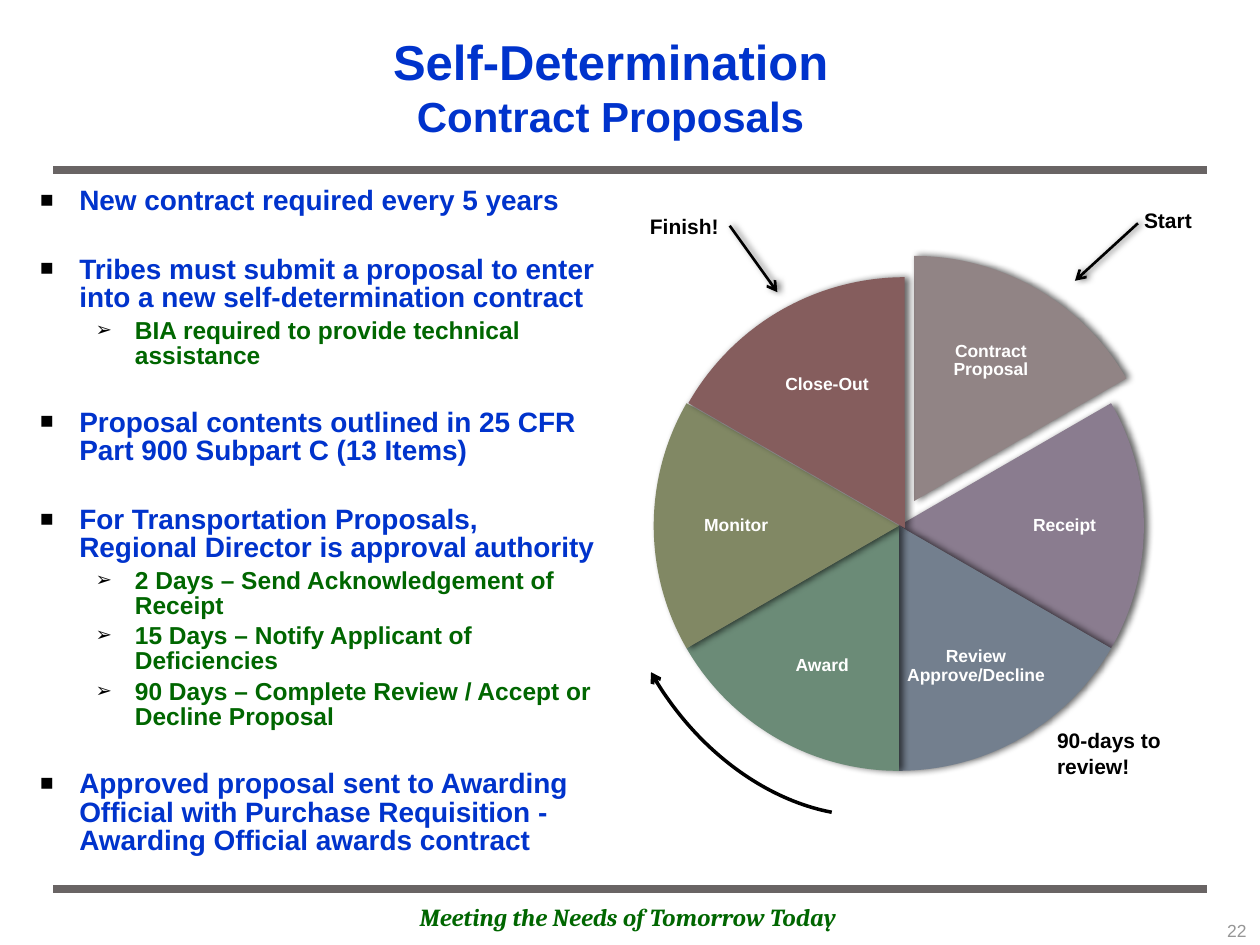
from lxml import etree
from pptx import Presentation
from pptx.dml.color import RGBColor
from pptx.enum.shapes import MSO_CONNECTOR as Conn, MSO_SHAPE as Kind
from pptx.enum.text import MSO_ANCHOR as Anchor, PP_ALIGN as Align
from pptx.oxml.ns import qn
from pptx.util import Cm, Pt

BLUE = RGBColor(0x00, 0x33, 0xCC)
GREEN = RGBColor(0x00, 0x66, 0x00)
BLACK = RGBColor(0x00, 0x00, 0x00)
WHITE = RGBColor(0xFF, 0xFF, 0xFF)
RULE = RGBColor(0x69, 0x64, 0x64)
GRAY = RGBColor(0x96, 0x96, 0x96)

# Body text: level, words, space before in points
POINTS = [
    (0, "New contract required every 5 years", 0),
    (0, "Tribes must submit a proposal to enter into a new "
        "self-determination contract", 23),
    (1, "BIA required to provide technical assistance", 3.2),
    (0, "Proposal contents outlined in 25 CFR Part 900 Subpart C (13 Items)", 23),
    (0, "For Transportation Proposals, Regional Director is approval authority", 23),
    (1, "2 Days – Send Acknowledgement of Receipt", 3.2),
    (1, "15 Days – Notify Applicant of Deficiencies", 3.2),
    (1, "90 Days – Complete Review / Accept or Decline Proposal", 3.2),
    (0, "Approved proposal sent to Awarding Official with Purchase "
        "Requisition - Awarding Official awards contract", 23),
]
# Level style: bullet, left margin in cm, size, colour
LEVELS = [("■", 0.79, 16, BLUE), ("➢", 1.91, 14, GREEN)]
HANG = 0.79

# Slices run clockwise from the top: label, fill, pie box, label box
DISC = (13.18, 5.66, 9.88, 9.88)
SLICES = [
    ("Contract Proposal", RGBColor(0x91, 0x84, 0x85),
     (13.49, 5.16, 9.88, 9.88), (18.54, 6.22, 2.87, 2.11)),
    ("Receipt", RGBColor(0x8A, 0x7C, 0x8F), DISC, (19.96, 9.6, 3, 2.01)),
    ("Review Approve/Decline", RGBColor(0x73, 0x7F, 0x8E), DISC,
     (18.24, 12.37, 2.87, 2.11)),
    ("Award", RGBColor(0x6B, 0x8B, 0x77), DISC, (15.14, 12.37, 2.87, 2.11)),
    ("Monitor", RGBColor(0x81, 0x88, 0x64), DISC, (13.34, 9.6, 3, 2.01)),
    ("Close-Out", RGBColor(0x85, 0x5D, 0x5D),
     (13.21, 5.59, 10.06, 10.11), (15.21, 6.68, 2.92, 2.16)),
]
# Angles in adjustment units: 216 is a full turn, 162 is the top
TURN, TOP = 216, 162


def cms(nums):
    return [Cm(n) for n in nums]


def add_run(para, words, size, color, bold=True, font="Arial"):
    run = para.add_run()
    run.text = words
    run.font.name, run.font.size = font, Pt(size)
    run.font.bold = bold
    run.font.color.rgb = color
    return run


def add_box(slide, box, align=Align.LEFT, anchor=Anchor.TOP, inset=None):
    frame = slide.shapes.add_textbox(*cms(box)).text_frame
    frame.word_wrap = True
    frame.vertical_anchor = anchor
    if inset is not None:
        frame.margin_left = frame.margin_right = Cm(inset)
        frame.margin_top = frame.margin_bottom = Cm(inset)
    frame.paragraphs[0].alignment = align
    return frame


def add_note(slide, words, box, size, color, align=Align.CENTER, **style):
    para = add_box(slide, box, align).paragraphs[0]
    return add_run(para, words, size, color, **style)


def add_glow(effects):
    """Put a soft dark shadow into an effect list."""
    shade = etree.SubElement(effects, qn("a:outerShdw"), blurRad=str(Pt(4)),
                             dist=str(Pt(2)), dir="0", rotWithShape="0")
    color = etree.SubElement(shade, qn("a:srgbClr"), val="000000")
    etree.SubElement(color, qn("a:alpha"), val="60000")


def add_head(shape):
    line = shape.line._get_or_add_ln()
    etree.SubElement(line, qn("a:tailEnd"), type="arrow")


def add_line(slide, ends, color, width, arrow=False):
    line = slide.shapes.add_connector(Conn.STRAIGHT, *cms(ends))
    line.line.color.rgb = color
    line.line.width = Pt(width)
    effects = etree.SubElement(line._element.spPr, qn("a:effectLst"))
    if arrow:
        add_head(line)
        add_glow(effects)


def add_slice(slide, step, label, color, box, spot):
    pie = slide.shapes.add_shape(Kind.PIE, *cms(box))
    size = TURN / len(SLICES)
    pie.adjustments[0] = (TOP + step * size) % TURN
    pie.adjustments[1] = (TOP + (step + 1) * size) % TURN
    pie.fill.solid()
    pie.fill.fore_color.rgb = color
    pie.line.fill.background()
    pie.shadow.inherit = False
    add_glow(pie._element.spPr.find(qn("a:effectLst")))
    frame = add_box(slide, spot, Align.CENTER, Anchor.MIDDLE, 0.03)
    para = frame.paragraphs[0]
    para.line_spacing = 0.9
    add_run(para, label, 10, WHITE)


def add_arc(slide):
    arc = slide.shapes.add_shape(Kind.ARC, *cms((12.83, 7.34, 7.04, 9.47)))
    arc.adjustments[0], arc.adjustments[1] = 179.98, 6.55
    arc.rotation = 144.5
    arc.fill.background()
    arc.shadow.inherit = False
    arc.line.color.rgb = BLACK
    arc.line.width = Pt(2)
    add_head(arc)


def add_title(slide):
    frame = add_box(slide, (3.51, 0.64, 17.6, 2.18), Align.CENTER, Anchor.MIDDLE)
    para = frame.paragraphs[0]
    add_run(para, "Self-Determination", 28, BLUE)
    para.add_line_break()
    add_run(para, "Contract Proposals", 24, BLUE)


def add_mark(para, mark, left):
    props = para._p.get_or_add_pPr()
    props.set("marL", str(Cm(left)))
    props.set("indent", str(-Cm(HANG)))
    color = etree.SubElement(props, qn("a:buClr"))
    etree.SubElement(color, qn("a:srgbClr"), val=str(BLACK))
    etree.SubElement(props, qn("a:buSzPct"), val="80000")
    etree.SubElement(props, qn("a:buFont"), typeface="Arial")
    etree.SubElement(props, qn("a:buChar"), char=mark)


def add_body(slide):
    frame = add_box(slide, (0.56, 3.66, 11.86, 14))
    for i, (level, words, gap) in enumerate(POINTS):
        para = frame.add_paragraph() if i else frame.paragraphs[0]
        mark, left, size, color = LEVELS[level]
        add_mark(para, mark, left)
        para.level = level
        para.line_spacing = 0.85
        para.space_before = Pt(gap)
        add_run(para, words, size, color)


def main():
    deck = Presentation()
    deck.slide_width, deck.slide_height = Cm(25.4), Cm(19.05)
    slide = deck.slides.add_slide(deck.slide_layouts[6])

    # Rules and footer
    for y in (17.93, 3.43):
        add_line(slide, (1.07, y, 24.33, y), RULE, 4.5)
    motto = add_note(slide, "Meeting the Needs of Tomorrow Today",
                     (3.12, 18.06, 19.08, 0.86), 14, GREEN, font="Cambria")
    motto.font.italic = True

    # Cycle of slices
    for step, part in enumerate(SLICES):
        add_slice(slide, step, *part)

    # Title, body and page number
    add_title(slide)
    add_body(slide)
    add_note(slide, "22", (22.2, 18.42, 3.18, 0.84), 10, GRAY,
             Align.RIGHT, bold=False)

    # Notes and arrows around the cycle
    add_line(slide, (22.94, 4.5, 21.67, 5.66), BLACK, 1.5, arrow=True)
    add_note(slide, "Start", (21.41, 4.06, 4.27, 0.76), 12, BLACK)
    add_note(slide, "90-days to review!", (21.06, 14.55, 3.45, 1.27), 12,
             BLACK, Align.LEFT)
    add_arc(slide)
    add_note(slide, "Finish!", (11.66, 4.19, 4.27, 0.76), 12, BLACK)
    add_line(slide, (14.71, 4.55, 15.67, 5.89), BLACK, 1.5, arrow=True)

    deck.save("out.pptx")


if __name__ == "__main__":
    main()
